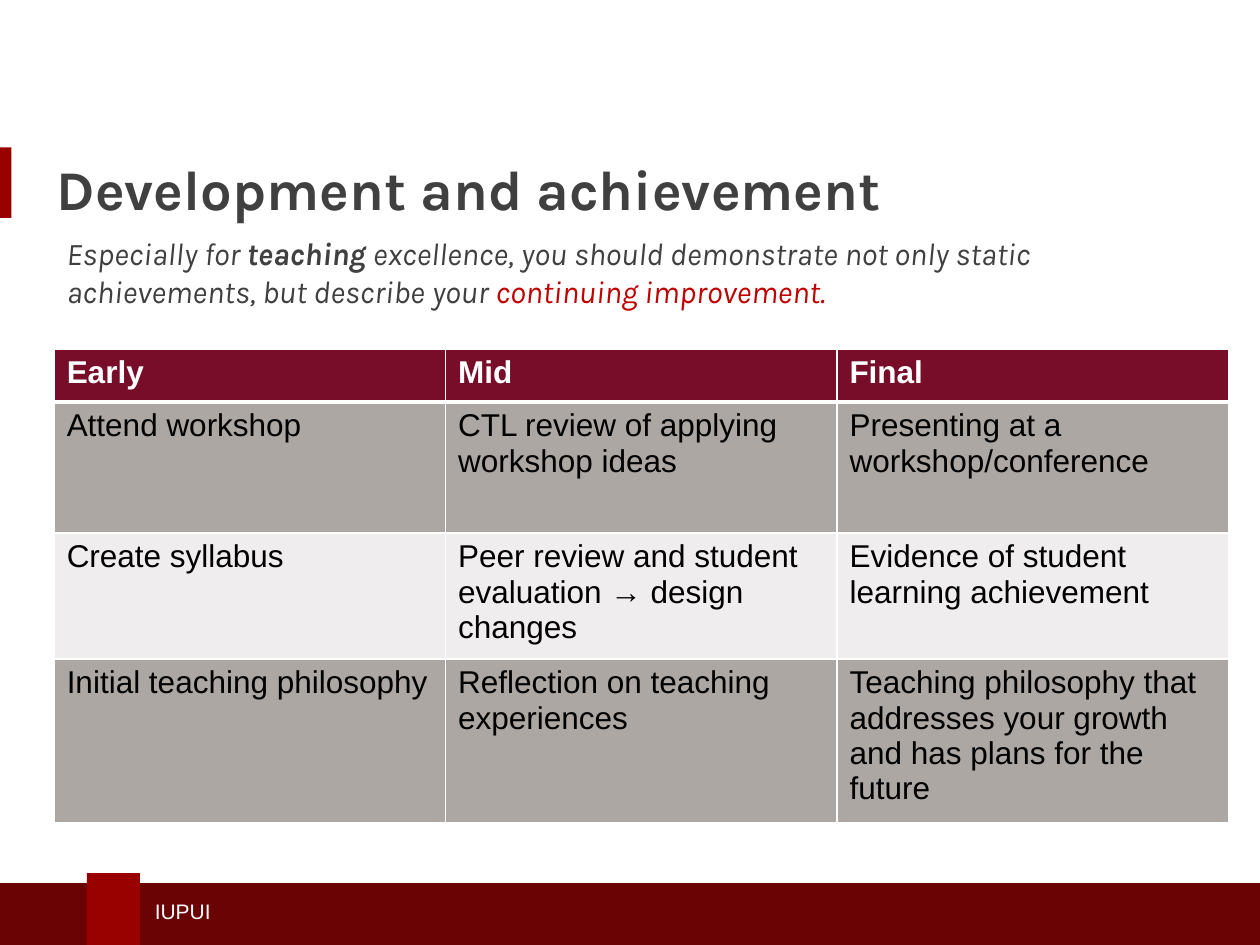
from dataclasses import dataclass

from lxml.etree import SubElement
from pptx import Presentation
from pptx.dml.color import RGBColor as RGB
from pptx.enum.shapes import MSO_SHAPE as SHAPE
from pptx.enum.text import MSO_ANCHOR as ANCHOR, PP_ALIGN as ALIGN
from pptx.oxml.ns import qn
from pptx.util import Inches, Pt


@dataclass(frozen=True)
class Theme:
    heading_font: str = "Karla"
    table_font: str = "Arial"
    title_size: Pt = Pt(32)
    body_size: Pt = Pt(18)
    footer_size: Pt = Pt(12)
    ink: RGB = RGB(0x40, 0x40, 0x41)
    black: RGB = RGB(0, 0, 0)
    white: RGB = RGB(0xFF, 0xFF, 0xFF)
    crimson: RGB = RGB(0x99, 0, 0)
    dark_red: RGB = RGB(0x69, 0x03, 0x04)
    accent: RGB = RGB(0xC0, 0, 0)
    header: RGB = RGB(0x77, 0x0D, 0x29)
    band: RGB = RGB(0xAD, 0xA7, 0xA4)
    light_band: RGB = RGB(0xEF, 0xED, 0xED)


T = Theme()


def set_font(font, name, size, color, bold=False):
    font.name, font.size, font.bold = name, size, bold
    font.color.rgb = color


def set_borders(cell, top, bottom):
    tc_pr = cell._tc.get_or_add_tcPr()
    for side, width in (("L", 1), ("R", 1), ("T", top), ("B", bottom)):
        ln = SubElement(tc_pr, qn(f"a:ln{side}"), w=str(Pt(width)))
        fill = SubElement(ln, qn("a:solidFill"))
        SubElement(fill, qn("a:srgbClr"), val=str(T.white))


prs = Presentation()
prs.slide_width, prs.slide_height = Inches(10), Inches(7.5)
s = prs.slides.add_slide(prs.slide_layouts[5])

# Title accent, footer bar and footer tab
for x, y, w, h, color in (
    (0, 1.17, 0.09, 0.56, T.crimson),
    (0, 7.01, 10, 0.49, T.dark_red),
    (0.69, 6.93, 0.42, 0.57, T.crimson),
):
    sp = s.shapes.add_shape(SHAPE.RECTANGLE, Inches(x), Inches(y), Inches(w), Inches(h))
    sp.shadow.inherit = False
    sp.fill.solid()
    sp.fill.fore_color.rgb = color
    sp.line.fill.background()

# Footer label
sp = s.shapes.add_textbox(Inches(1.13), Inches(7.08), Inches(3.95), Inches(0.3))
tf = sp.text_frame
tf.word_wrap = True
tf.vertical_anchor = ANCHOR.MIDDLE
p = tf.paragraphs[0]
p.text = "IUPUI"
set_font(p.font, T.table_font, T.footer_size, T.white)

# Title
title = s.shapes.title
title.left, title.top = Inches(0.35), Inches(1.14)
title.width, title.height = Inches(8.75), Inches(0.7)
tf = title.text_frame
tf.vertical_anchor = ANCHOR.MIDDLE
p = tf.paragraphs[0]
p.text = "Development and achievement"
p.alignment = ALIGN.LEFT
set_font(p.font, T.heading_font, T.title_size, T.ink, bold=True)

# Introduction
sp = s.shapes.add_textbox(Inches(0.43), Inches(1.81), Inches(8.77), Inches(0.9))
tf = sp.text_frame
tf.word_wrap = True
p = tf.paragraphs[0]
for text, bold, color in (
    ("Especially for ", False, T.ink),
    ("teaching ", True, T.ink),
    ("excellence, you should demonstrate not only static achievements, "
     "but describe your ", False, T.ink),
    ("continuing improvement.", False, T.accent),
):
    r = p.add_run()
    r.text = text
    set_font(r.font, T.heading_font, T.body_size, color, bold)
    r.font.italic = True

# Table of stages
rows = (
    ("Early", "Mid", "Final"),
    ("Attend workshop", "CTL review of applying workshop ideas",
     "Presenting at a workshop/conference"),
    ("Create syllabus", "Peer review and student evaluation → design changes",
     "Evidence of student learning achievement"),
    ("Initial teaching philosophy", "Reflection on teaching experiences",
     "Teaching philosophy that addresses your growth and has plans for the future"),
)
row_heights = (0.42, 1.04, 0.94, 1.22)
row_fills = (T.header, T.band, T.light_band, T.band)

table = s.shapes.add_table(
    len(rows), len(rows[0]),
    Inches(0.43), Inches(2.77), Inches(9.32), Inches(sum(row_heights)),
).table
for i, (texts, height, color) in enumerate(zip(rows, row_heights, row_fills)):
    table.rows[i].height = Inches(height)
    for j, text in enumerate(texts):
        cell = table.cell(i, j)
        set_borders(cell, top=3 if i == 1 else 1, bottom=3 if i == 0 else 1)
        cell.fill.solid()
        cell.fill.fore_color.rgb = color
        p = cell.text_frame.paragraphs[0]
        p.text = text
        set_font(p.font, T.table_font, T.body_size,
                 T.white if i == 0 else T.black, bold=i == 0)

prs.save("out.pptx")
